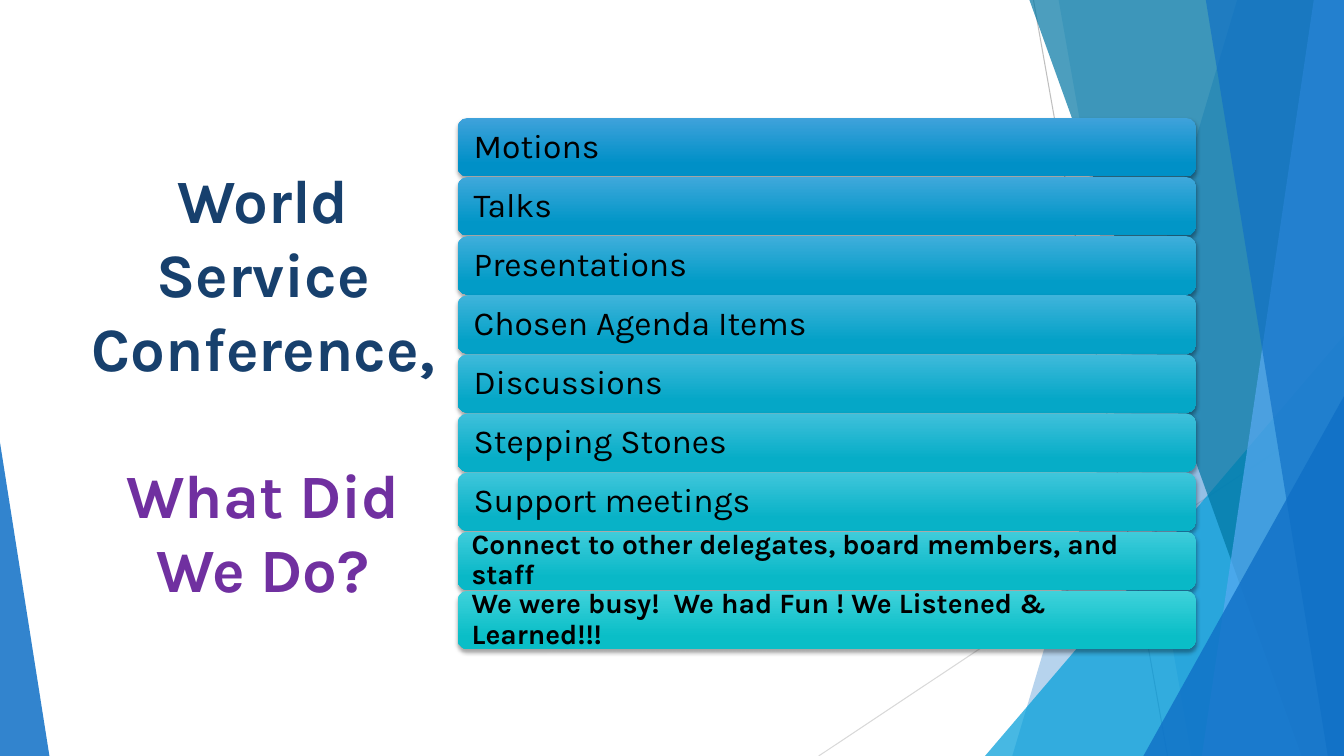
from lxml.etree import SubElement
from pptx import Presentation
from pptx.dml.color import RGBColor
from pptx.enum.shapes import MSO_CONNECTOR, MSO_SHAPE
from pptx.enum.text import MSO_ANCHOR, PP_ALIGN
from pptx.oxml.ns import qn
from pptx.util import Inches, Pt

COLORS = {
    "blue": "0F6FC6",
    "sky": "009DD9",
    "teal": "0076A3",
    "pale": "59AAF2",
    "gray": "BFBFBF",
    "light_gray": "D9D9D9",
    "navy": "17406D",
    "purple": "7030A0",
    "black": "000000",
    "bar_top_first": "3FA2DB",
    "bar_top_last": "3FD2DB",
    "bar_base_first": "0090C7",
    "bar_base_last": "0ABEC7",
}
FONT = "Karla"
TOPICS = [
    "Motions",
    "Talks",
    "Presentations",
    "Chosen Agenda Items",
    "Discussions",
    "Stepping Stones",
    "Support meetings",
]
CLOSING_TOPICS = [
    "Connect to other delegates, board members, and staff",
    "We were busy!  We had Fun ! We Listened & Learned!!!",
]


def rgb(name):
    return RGBColor.from_string(COLORS[name])


def blend(first, last, share):
    pairs = zip(rgb(first), rgb(last))
    return RGBColor(*(round(a + (b - a) * share) for a, b in pairs))


def write_text(para, text, size=24, color="black", bold=False,
               align=PP_ALIGN.LEFT, spacing=None, before=0):
    para.alignment = align
    para.line_spacing = spacing
    para.space_before = Pt(before)
    span = para.add_run()
    span.text = text
    span.font.name = FONT
    span.font.size = Pt(size)
    span.font.bold = bold
    span.font.color.rgb = rgb(color)


def paint(shape, color, opacity):
    shape.shadow.inherit = False
    shape.line.fill.background()
    shape.fill.solid()
    shape.fill.fore_color.rgb = rgb(color)
    tint = shape._element.spPr.find(".//" + qn("a:srgbClr"))
    SubElement(tint, qn("a:alpha"), val=str(opacity * 1000))


def add_thin_line(page, start, end, color):
    line = page.shapes.add_connector(
        MSO_CONNECTOR.STRAIGHT, *(Inches(value) for value in start + end))
    line.line.color.rgb = rgb(color)
    line.line.width = Pt(0.75)
    SubElement(line._element.spPr, qn("a:effectLst"))


def add_facet(page, box, top_x, bottom_x, color, opacity):
    left, top, width, height = box
    right, bottom = left + width, top + height
    corners = [(right, top), (right, bottom), (left + bottom_x, bottom)]
    outline = page.shapes.build_freeform(Inches(left + top_x), Inches(top))
    outline.add_line_segments([(Inches(x), Inches(y)) for x, y in corners], close=True)
    paint(outline.convert_to_shape(), color, opacity)


def add_corner(page, box, peak, color, opacity):
    triangle = page.shapes.add_shape(
        MSO_SHAPE.ISOSCELES_TRIANGLE, *(Inches(value) for value in box))
    triangle.adjustments[0] = peak
    paint(triangle, color, opacity)


def draw_backdrop(page, box):
    left, top, width, height = box
    right, bottom = left + width, top + height
    add_thin_line(page, (left + 10.25, top), (left + 11.58, bottom), "gray")
    add_thin_line(page, (right, top + 4.03), (left + 8.12, bottom), "light_gray")
    add_facet(page, (left + 10.04, top, 3.29, height), 2.23, 0, "blue", 30)
    add_facet(page, (left + 10.5, top, 2.83, height), 0, 1.32, "blue", 20)
    add_corner(page, (right - 3.56, bottom - 4.17, 3.56, 4.17), 1, "sky", 72)
    add_facet(page, (left + 10.21, top, 3.12, height), 0, 2.7, "teal", 70)
    add_facet(page, (left + 11.92, top, 1.41, height), 1.11, 0, "pale", 70)
    add_facet(page, (left + 11.96, top, 1.37, height), 0, 1.21, "blue", 65)
    add_corner(page, (right - 1.99, bottom - 3.57, 1.99, 3.57), 1, "blue", 80)
    add_corner(page, (left, bottom - 3.11, 0.49, 3.11), 0, "blue", 85)


def draw_title(page, box):
    frame = page.shapes.add_textbox(*(Inches(value) for value in box)).text_frame
    frame.word_wrap = True
    frame.vertical_anchor = MSO_ANCHOR.MIDDLE
    style = {"size": 44, "bold": True, "align": PP_ALIGN.CENTER}
    write_text(frame.paragraphs[0], "World Service Conference,", color="navy", **style)
    write_text(frame.add_paragraph(), "What Did We Do?", color="purple",
               before=52.5, **style)


def add_bar(page, box, share, text, closing):
    bar = page.shapes.add_shape(
        MSO_SHAPE.ROUNDED_RECTANGLE, *(Inches(value) for value in box))
    bar.line.fill.background()
    bar.fill.gradient()
    bar.fill.gradient_angle = 270
    upper, lower = bar.fill.gradient_stops
    upper.position, lower.position = 0, 0.78
    upper.color.rgb = blend("bar_top_first", "bar_top_last", share)
    lower.color.rgb = blend("bar_base_first", "bar_base_last", share)

    bar.shadow.inherit = False
    effects = bar._element.spPr.find(qn("a:effectLst"))
    shadow = SubElement(effects, qn("a:outerShdw"), blurRad=str(Pt(3)),
                        dist=str(Pt(2)), dir="5400000", rotWithShape="0")
    shade = SubElement(shadow, qn("a:srgbClr"), val=COLORS["black"])
    SubElement(shade, qn("a:alpha"), val="35000")

    frame = bar.text_frame
    frame.word_wrap = True
    frame.vertical_anchor = MSO_ANCHOR.MIDDLE
    frame.margin_left = frame.margin_right = Inches(0.11 if closing else 0.13)
    frame.margin_top = frame.margin_bottom = 0
    write_text(frame.paragraphs[0], text, size=20 if closing else 24,
               bold=closing, spacing=0.9)


def draw_topics(page, box):
    left, top, width, height = box
    topics = TOPICS + CLOSING_TOPICS
    bar_height = 0.58
    steps = len(topics) - 1
    pitch = (height - bar_height) / steps
    for index, topic in enumerate(topics):
        add_bar(page, (left, top + index * pitch, width, bar_height),
                index / steps, topic, topic in CLOSING_TOPICS)


def main():
    deck = Presentation()
    deck.slide_width, deck.slide_height = Inches(13.33), Inches(7.5)
    page = deck.slides.add_slide(deck.slide_layouts[6])
    draw_backdrop(page, (0, 0, 13.33, 7.5))
    draw_title(page, (0.67, 1.17, 3.88, 5.27))
    draw_topics(page, (4.54, 1.17, 7.32, 5.27))
    deck.save("out.pptx")


if __name__ == "__main__":
    main()
